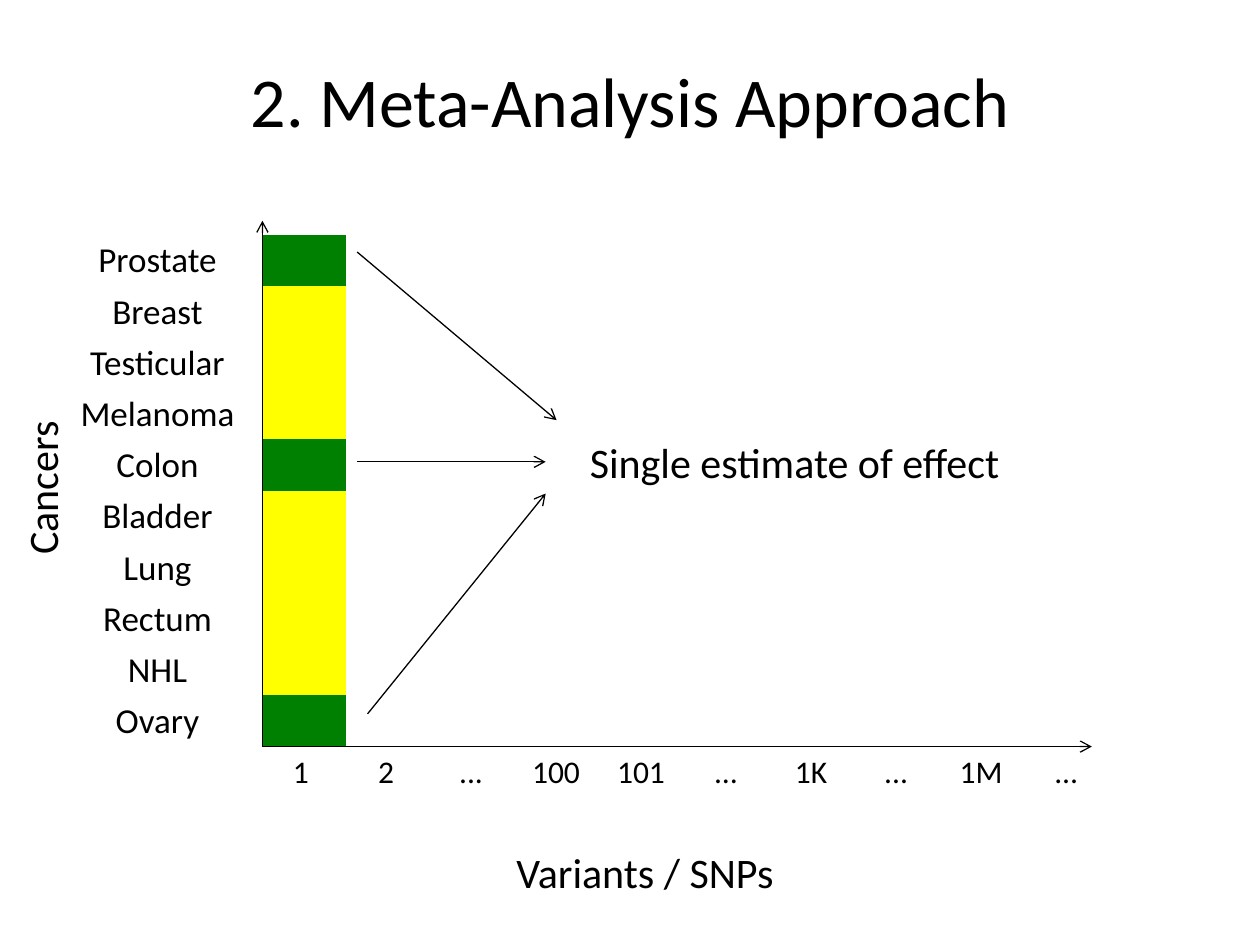
import dataclasses

import pptx
import pptx.dml.color
import pptx.enum.shapes
import pptx.enum.text
import pptx.oxml.ns
import pptx.oxml.xmlchemy
import pptx.util

Cm = pptx.util.Cm
ALIGN = pptx.enum.text.PP_ALIGN
ANCHOR = pptx.enum.text.MSO_ANCHOR


@dataclasses.dataclass(frozen=True)
class Theme:
    font: str = "Calibri"
    ink: str = "000000"
    paper: str = "FFFFFF"
    associated: str = "008000"
    other: str = "FFFF00"
    title: int = 40
    caption: int = 24
    cancer: int = 20
    variant: int = 18
    line: float = 0.75


theme = Theme()


def write(frame, text, size, align=ALIGN.LEFT):
    """Put one formatted paragraph into a text frame."""
    paragraph = frame.paragraphs[0]
    paragraph.alignment = align
    run = paragraph.add_run()
    run.text = text
    run.font.name = theme.font
    run.font.size = pptx.util.Pt(size)
    run.font.color.rgb = pptx.dml.color.RGBColor.from_string(theme.ink)


def add_plain_table(rows, columns, left, top, width, height):
    """Add a table with neither style nor grid lines."""
    table = slide.shapes.add_table(
        rows, columns, Cm(left), Cm(top), Cm(width), Cm(height)).table
    table.first_row = table.horz_banding = False
    style = table._tbl.tblPr.find(pptx.oxml.ns.qn("a:tableStyleId"))
    style.text = "{2D5ABB26-0587-4C30-8999-92F81FD0307C}"
    for cell in table.iter_cells():
        cell.fill.background()
    return table


presentation = pptx.Presentation()
presentation.slide_width = Cm(25.4)
presentation.slide_height = Cm(19.05)
slide = presentation.slides.add_slide(presentation.slide_layouts[5])

cancers = ["Prostate", "Breast", "Testicular", "Melanoma", "Colon",
           "Bladder", "Lung", "Rectum", "NHL", "Ovary"]
associated = {"Prostate", "Colon", "Ovary"}
variants = ["1", "2", "...", "100", "101", "…", "1K", "...", "1M", "…"]

# Plot area: the first variant is coloured, the others stay white
origin_x, origin_y = 5.29, 15.05
plot_top, plot_height = 4.73, 10.32
effects = add_plain_table(len(cancers), len(variants),
                          origin_x, plot_top, 16.93, plot_height)
for row, cancer in enumerate(cancers):
    for column in range(len(variants)):
        cell = effects.cell(row, column)
        cell.margin_top = cell.margin_bottom = 0
        color = theme.paper
        if column == 0:
            color = theme.associated if cancer in associated else theme.other
        cell.fill.solid()
        cell.fill.fore_color.rgb = pptx.dml.color.RGBColor.from_string(color)

# Variant labels below the plot
variant_labels = add_plain_table(1, len(variants), 5.21, 15.06, 17.15, 1.03)
for column, variant in enumerate(variants):
    write(variant_labels.cell(0, column).text_frame, variant,
          size=theme.variant, align=ALIGN.CENTER)

# Cancer labels left of the plot
cancer_labels = add_plain_table(len(cancers), 1,
                                1.06, plot_top, 4.23, plot_height)
for row, cancer in enumerate(cancers):
    cell = cancer_labels.cell(row, 0)
    cell.vertical_anchor = ANCHOR.MIDDLE
    cell.margin_left = cell.margin_right = cell.margin_top = Cm(0.03)
    cell.margin_bottom = 0
    write(cell.text_frame, cancer, size=theme.cancer, align=ALIGN.CENTER)

# Title
title = slide.shapes.title
title.left, title.top, title.width, title.height = (
    Cm(0), Cm(0.42), Cm(25.4), Cm(3.18))
title.text_frame.vertical_anchor = ANCHOR.MIDDLE
write(title.text_frame, "2. Meta-Analysis Approach",
      size=theme.title, align=ALIGN.CENTER)

# Two axes, then three arrows to the estimate
for start_x, start_y, end_x, end_y in [
    (origin_x, origin_y, 22.01, origin_y),
    (origin_x, origin_y, origin_x, 4.45),
    (7.2, 5.08, 11.22, 8.47),
    (7.2, 9.31, 11, 9.31),
    (7.41, 14.39, 11, 9.95),
]:
    arrow = slide.shapes.add_connector(
        pptx.enum.shapes.MSO_CONNECTOR.STRAIGHT,
        Cm(start_x), Cm(start_y), Cm(end_x), Cm(end_y))
    arrow.line.width = pptx.util.Pt(theme.line)
    arrow.line.color.rgb = pptx.dml.color.RGBColor.from_string(theme.ink)
    tail = pptx.oxml.xmlchemy.OxmlElement("a:tailEnd")
    tail.set("type", "arrow")
    arrow.line._get_or_add_ln().append(tail)
    arrow._element.spPr.append(
        pptx.oxml.xmlchemy.OxmlElement("a:effectLst"))

# Axis names and the result
for text, left, top, width, rotation in [
    ("Cancers", -1.02, 8.94, 3.71, 270),
    ("Variants / SNPs", 10.16, 16.93, 6.48, 0),
    ("Single estimate of effect", 11.64, 8.68, 9.63, 0),
]:
    caption = slide.shapes.add_textbox(Cm(left), Cm(top), Cm(width), Cm(1.27))
    caption.rotation = rotation
    caption.text_frame.word_wrap = False
    caption.text_frame.auto_size = (
        pptx.enum.text.MSO_AUTO_SIZE.SHAPE_TO_FIT_TEXT)
    write(caption.text_frame, text, size=theme.caption)

presentation.save("out.pptx")
